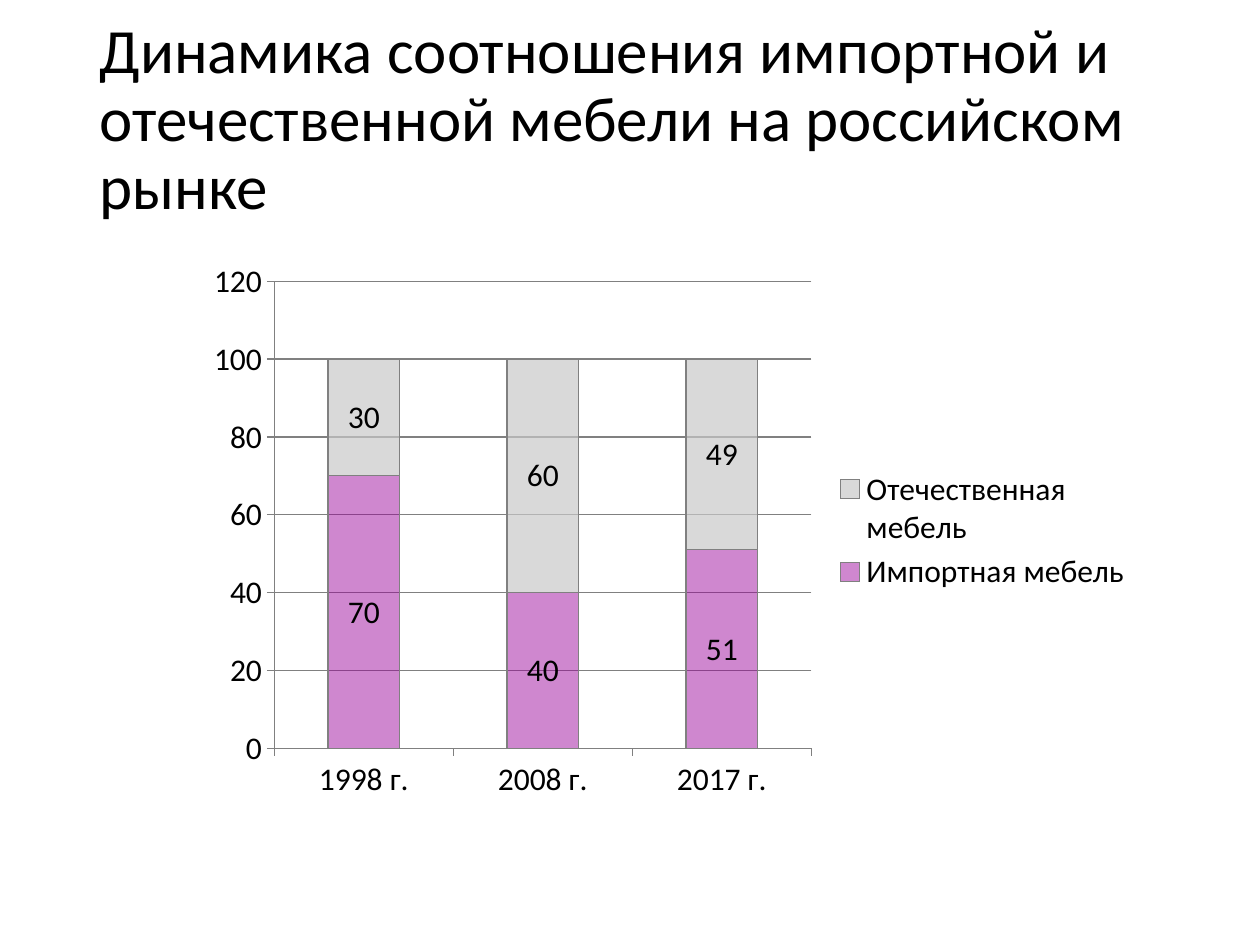
from lxml.etree import SubElement
from pptx import Presentation
from pptx.chart.data import CategoryChartData
from pptx.dml.color import RGBColor
from pptx.enum.chart import XL_CHART_TYPE as ChartType
from pptx.enum.chart import XL_LABEL_POSITION as LabelPos
from pptx.enum.chart import XL_LEGEND_POSITION as LegendPos
from pptx.enum.chart import XL_TICK_MARK as Tick
from pptx.enum.text import MSO_ANCHOR, PP_ALIGN
from pptx.oxml.ns import qn
from pptx.util import Pt

TITLE = "Динамика соотношения импортной и отечественной мебели на российском рынке"
YEARS = ["1998 г.", "2008 г.", "2017 г."]
SERIES = [  # name, values, colour, opacity in percent
    ("Импортная мебель", (70, 40, 51), "imported", 47),
    ("Отечественная мебель", (30, 60, 49), "domestic", 69),
]
COLORS = {"text": "000000", "line": "808080", "imported": "990099", "domestic": "C9C9C9"}
FONT = "Calibri"
PX = 914400 // 126
SLIDE = (1260, 945)
TITLE_BOX = (87, 29, 1086, 184)
CHART_BOX = (195, 251, 950, 559)


def px(values):
    return [v * PX for v in values]


def rgb(name):
    return RGBColor.from_string(COLORS[name])


def style_font(font, size):
    font.name, font.size = FONT, Pt(size)
    font.color.rgb = rgb("text")


def style_line(line):
    line.color.rgb = rgb("line")
    line.width = Pt(0.75)


def add_title(s):
    title = s.shapes.title
    title.left, title.top, title.width, title.height = px(TITLE_BOX)
    tf = title.text_frame
    tf.text = TITLE
    tf.word_wrap = True
    tf.vertical_anchor = MSO_ANCHOR.MIDDLE
    p = tf.paragraphs[0]
    p.alignment = PP_ALIGN.LEFT
    p.line_spacing = 0.9
    style_font(p.font, 36)


def style_series(series, color, opacity):
    fill = series.format.fill
    fill.solid()
    fill.fore_color.rgb = rgb(color)
    srgb = series.format.fill._xPr.find(qn("a:solidFill")).find(qn("a:srgbClr"))
    SubElement(srgb, qn("a:alpha"), val=str(opacity * 1000))
    style_line(series.format.line)
    labels = series.data_labels
    labels.show_value = True
    labels.position = LabelPos.CENTER
    style_font(labels.font, 18)


def add_chart(s):
    data = CategoryChartData()
    data.categories = YEARS
    for name, values, _, _ in SERIES:
        data.add_series(name, values)
    chart = s.shapes.add_chart(ChartType.COLUMN_STACKED, *px(CHART_BOX), data).chart
    style_font(chart.font, 18)
    chart.has_title = False
    chart.has_legend = True
    chart.legend.position = LegendPos.RIGHT
    chart.legend.include_in_layout = False

    plot = chart.plots[0]
    plot.gap_width, plot.overlap = 150, 100
    plot.vary_by_categories = False
    for series, (_, _, color, opacity) in zip(plot.series, SERIES):
        style_series(series, color, opacity)

    for axis in (chart.category_axis, chart.value_axis):
        axis.major_tick_mark = Tick.OUTSIDE
        axis.minor_tick_mark = Tick.NONE
        style_line(axis.format.line)
    values = chart.value_axis
    values.minimum_scale, values.maximum_scale, values.major_unit = 0, 120, 20
    values.has_major_gridlines = True
    style_line(values.major_gridlines.format.line)


def main():
    prs = Presentation()
    prs.slide_width, prs.slide_height = px(SLIDE)
    s = prs.slides.add_slide(prs.slide_layouts[5])
    add_title(s)
    add_chart(s)
    prs.save("out.pptx")


if __name__ == "__main__":
    main()
